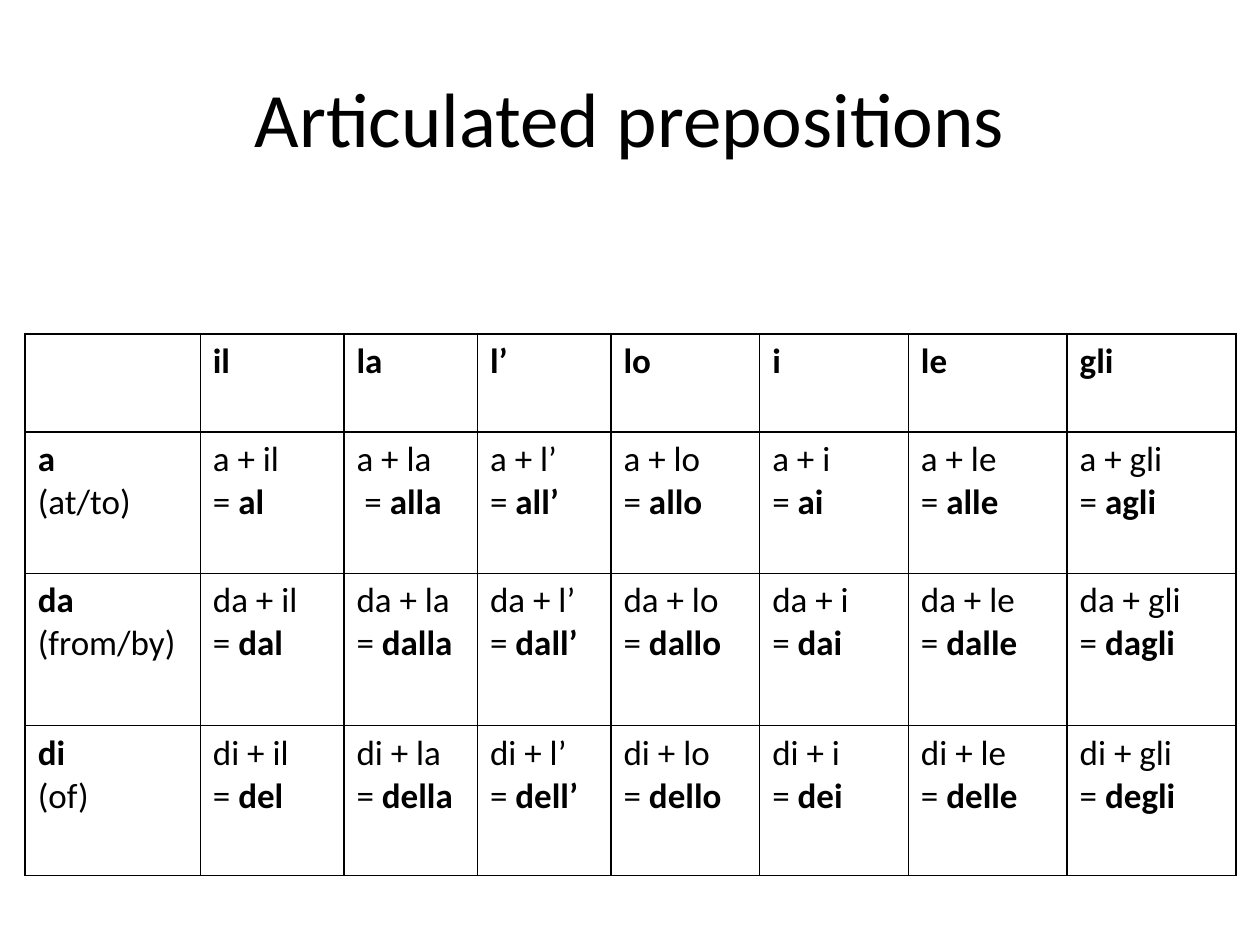
from lxml.etree import SubElement
from pptx import Presentation
from pptx.dml.color import RGBColor
from pptx.enum.text import MSO_ANCHOR, PP_ALIGN
from pptx.oxml.ns import qn
from pptx.util import Inches, Pt

COLORS = {"ink": "000000", "paper": "FFFFFF"}
WIDTHS = [1.39, 1.14, 1.06, 1.06, 1.18, 1.18, 1.26, 1.34]
HEIGHTS = [0.78, 1.12, 1.21, 1.19]
ENDINGS = {"il": "l", "la": "lla", "l’": "ll’", "lo": "llo",
           "i": "i", "le": "lle", "gli": "gli"}
STEMS = [("a", "at/to", "a"), ("da", "from/by", "da"), ("di", "of", "de")]


class Deck:
    def __init__(self, slide, font="Calibri"):
        self.slide = slide
        self.font = font

    def text(self, frame, lines, size, align=PP_ALIGN.LEFT):
        for index, line in enumerate(lines):
            para = frame.add_paragraph() if index else frame.paragraphs[0]
            para.alignment = align
            para.font.name = self.font
            para.font.size = Pt(size)
            para.font.color.rgb = RGBColor.from_string(COLORS["ink"])
            for words, bold in line:
                run = para.add_run()
                run.text = words
                run.font.name = self.font
                run.font.size = Pt(size)
                run.font.bold = bold
                run.font.color.rgb = RGBColor.from_string(COLORS["ink"])

    def title(self, words, left, top, width, height):
        box = self.slide.shapes.add_textbox(
            Inches(left), Inches(top), Inches(width), Inches(height))
        frame = box.text_frame
        frame.word_wrap = True
        frame.vertical_anchor = MSO_ANCHOR.MIDDLE
        self.text(frame, [[(words, False)]], 44, PP_ALIGN.CENTER)

    def border(self, cell):
        props = cell._tc.get_or_add_tcPr()
        for side in ("L", "R", "T", "B"):
            line = SubElement(props, qn(f"a:ln{side}"), w=str(Pt(1)))
            fill = SubElement(line, qn("a:solidFill"))
            SubElement(fill, qn("a:srgbClr"), val=COLORS["ink"])

    def table(self, rows, left, top):
        table = self.slide.shapes.add_table(
            len(rows), len(WIDTHS), Inches(left), Inches(top),
            Inches(sum(WIDTHS)), Inches(sum(HEIGHTS))).table
        table.first_row = False
        table.horz_banding = False
        for column, width in zip(table.columns, WIDTHS):
            column.width = Inches(width)
        for row, height, cells in zip(table.rows, HEIGHTS, rows):
            row.height = Inches(height)
            for cell, lines in zip(row.cells, cells):
                self.border(cell)
                cell.fill.solid()
                cell.fill.fore_color.rgb = RGBColor.from_string(COLORS["paper"])
                self.text(cell.text_frame, lines, 20)


def grid():
    rows = [[[]] + [[[(article, True)]] for article in ENDINGS]]
    for word, sense, stem in STEMS:
        row = [[[(word, True)], [(f"({sense})", False)]]]
        for article, ending in ENDINGS.items():
            result = stem + ending
            equals = " = " if result == "alla" else "= "
            row.append([[(f"{word} + {article}", False)],
                        [(equals, False), (result, True)]])
        rows.append(row)
    return rows


def main():
    show = Presentation()
    show.slide_width = Inches(10)
    show.slide_height = Inches(7.5)
    deck = Deck(show.slides.add_slide(show.slide_layouts[6]))
    deck.title("Articulated prepositions", 0.5, 0.3, 9, 1.25)
    deck.table(grid(), 0.2, 2.65)
    show.save("out.pptx")


if __name__ == "__main__":
    main()
